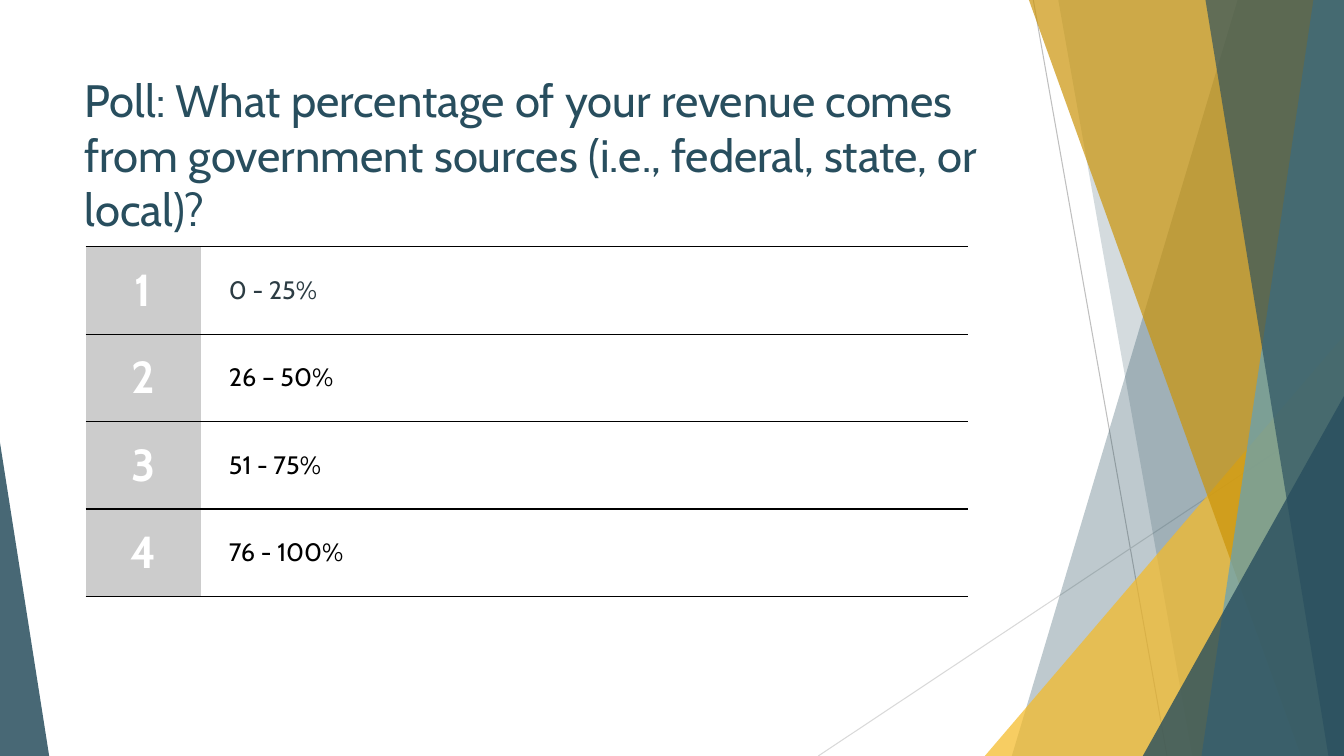
from lxml.etree import SubElement
from pptx import Presentation
from pptx.dml.color import RGBColor
from pptx.enum.shapes import MSO_CONNECTOR, MSO_SHAPE
from pptx.enum.text import MSO_ANCHOR, MSO_AUTO_SIZE, PP_ALIGN
from pptx.oxml.ns import qn
from pptx.util import Cm, Pt

W, H = 33.87, 19.05
FONT = "Cabin"
TEAL, BLACK, WHITE, GREY = "284E5E", "000000", "FFFFFF", "CCCCCC"


def color(value):
    return RGBColor.from_string(value)


def write(tf, text, size=18, fill=BLACK, bold=False, align=PP_ALIGN.LEFT):
    p = tf.paragraphs[0]
    p.alignment = align
    r = p.add_run()
    r.text = text
    r.font.name = FONT
    r.font.size = Pt(size)
    r.font.bold = bold
    r.font.color.rgb = color(fill)


def paint(sp, fill, opacity):
    sp.shadow.inherit = False
    sp.line.fill.background()
    sp.fill.solid()
    sp.fill.fore_color.rgb = color(fill)
    clr = sp.fill._xPr.find(qn("a:solidFill"))[0]
    SubElement(clr, qn("a:alpha")).set("val", str(opacity * 1000))


def add_ray(s, x1, y1, x2, y2, fill):
    ln = s.shapes.add_connector(MSO_CONNECTOR.STRAIGHT, Cm(x1), Cm(y1), Cm(x2), Cm(y2))
    ln.line.color.rgb = color(fill)
    ln.line.width = Pt(0.75)
    SubElement(ln._element.spPr, qn("a:effectLst"))


def add_band(s, right, bottom, top_x, bottom_x, fill, opacity):
    fb = s.shapes.build_freeform(Cm(top_x), 0)
    corners = [(right, 0), (right, bottom), (bottom_x, bottom)]
    fb.add_line_segments([(Cm(x), Cm(y)) for x, y in corners], close=True)
    paint(fb.convert_to_shape(), fill, opacity)


def add_triangle(s, x, y, w, h, apex, fill, opacity):
    sp = s.shapes.add_shape(MSO_SHAPE.ISOSCELES_TRIANGLE, Cm(x), Cm(y), Cm(w), Cm(h))
    sp.adjustments[0] = apex
    paint(sp, fill, opacity)


def add_facets(s, w, h):
    add_ray(s, 26.04, 0, 29.41, h, "BFBFBF")
    add_ray(s, w, 10.24, 20.62, h, "D9D9D9")
    add_band(s, w, h, 31.19, 25.5, TEAL, 30)
    add_band(s, w, h, 26.67, 30.05, TEAL, 20)
    add_triangle(s, 24.82, 8.46, w - 24.82, h - 8.46, 1, "F5BA26", 72)
    add_band(s, w, h, 25.93, 32.79, "CB9409", 70)
    add_band(s, w, h, 33.1, 30.28, "61A1BC", 70)
    add_band(s, w, h, 30.38, 33.48, TEAL, 65)
    add_triangle(s, 28.8, 9.98, w - 28.8, h - 9.98, 1, TEAL, 80)
    add_triangle(s, 0, 11.15, 1.24, h - 11.15, 0, TEAL, 85)


def add_title(s, x, y, w, h, text):
    sp = s.shapes.title
    sp.left, sp.top, sp.width, sp.height = Cm(x), Cm(y), Cm(w), Cm(h)
    tf = sp.text_frame
    tf.word_wrap = True
    tf.auto_size = MSO_AUTO_SIZE.NONE
    tf.vertical_anchor = MSO_ANCHOR.TOP
    write(tf, text, size=32.4, fill=TEAL)


def rule_cell(cell):
    tcPr = cell._tc.get_or_add_tcPr()
    for side in "LR":
        SubElement(SubElement(tcPr, qn(f"a:ln{side}")), qn("a:noFill"))
    for side in "TB":
        ln = SubElement(tcPr, qn(f"a:ln{side}"))
        ln.set("w", str(Pt(1)))
        fill = SubElement(ln, qn("a:solidFill"))
        SubElement(fill, qn("a:srgbClr")).set("val", BLACK)


def add_answers(s, x, y, w, h, answers):
    gf = s.shapes.add_table(len(answers), 2, Cm(x), Cm(y), Cm(w), Cm(h))
    tbl = gf.table
    tbl.first_row = tbl.horz_banding = False
    tbl.columns[0].width = Cm(2.9)
    tbl.columns[1].width = Cm(w - 2.9)
    for i, (text, fill) in enumerate(answers):
        number, answer = tbl.cell(i, 0), tbl.cell(i, 1)
        for cell, inset in ((number, 0.36), (answer, 0.71)):
            rule_cell(cell)
            cell.vertical_anchor = MSO_ANCHOR.MIDDLE
            cell.margin_left, cell.margin_right = Cm(inset), Cm(0.36)
        number.fill.solid()
        number.fill.fore_color.rgb = color(GREY)
        answer.fill.background()
        write(number.text_frame, str(i + 1), size=32, fill=WHITE, bold=True,
              align=PP_ALIGN.CENTER)
        write(answer.text_frame, text, fill=fill)


def main():
    prs = Presentation()
    prs.slide_width, prs.slide_height = Cm(W), Cm(H)
    s = prs.slides.add_slide(prs.slide_layouts[5])
    add_facets(s, W, H)
    add_title(s, 1.88, 1.7, 23.88, 3.66,
              "Poll: What percentage of your revenue comes from government "
              "sources (i.e., federal, state, or local)?")
    add_answers(s, 2.16, 6.22, 22.23, 8.81, [
        ("0 - 25%", "2C3C43"),
        ("26 – 50%", BLACK),
        ("51 - 75%", BLACK),
        ("76 - 100%", BLACK),
    ])
    prs.save("out.pptx")


if __name__ == "__main__":
    main()
